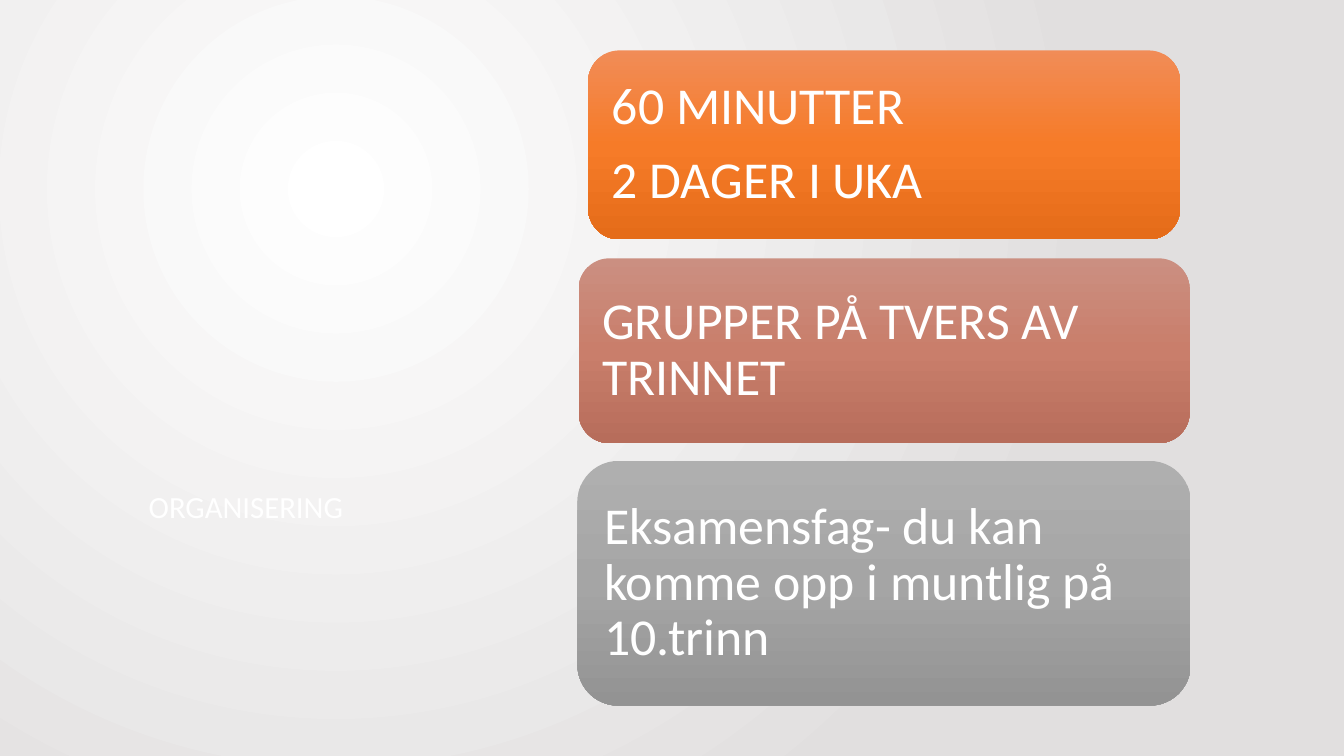
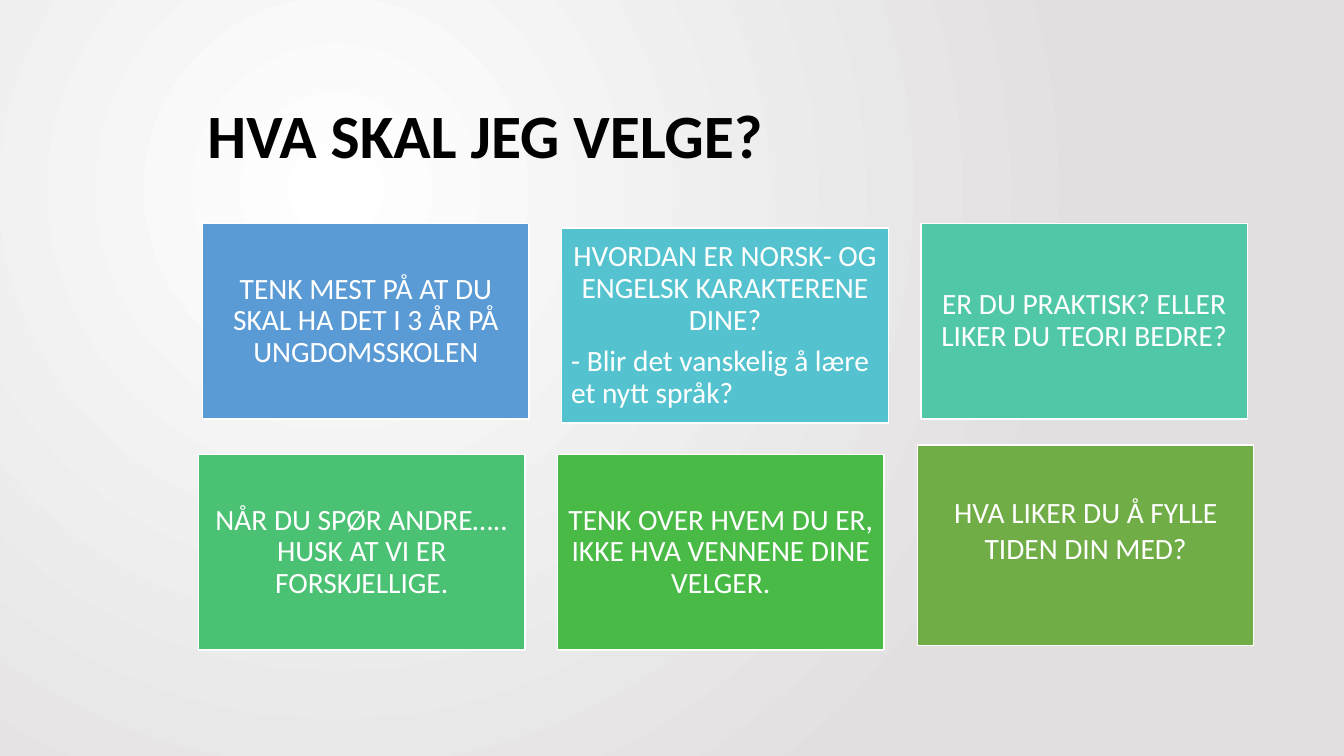
from lxml import etree
from pptx import Presentation
from pptx.dml.color import RGBColor
from pptx.enum.shapes import MSO_SHAPE as Shape
from pptx.enum.text import MSO_ANCHOR as Anchor, MSO_AUTO_SIZE as AutoSize, PP_ALIGN as Align
from pptx.oxml.ns import qn
from pptx.util import Emu, Pt

PX = 9525
FONT = "Calibri"
WHITE = RGBColor(0xFF, 0xFF, 0xFF)
BLACK = RGBColor(0x00, 0x00, 0x00)
LIGHT_GREY = RGBColor(0xE1, 0xDF, 0xDF)
ORANGE = (RGBColor(0xF1, 0x8C, 0x57), RGBColor(0xF6, 0x7B, 0x28), RGBColor(0xE5, 0x6C, 0x19))
TERRACOTTA = (RGBColor(0xCB, 0x8F, 0x81), RGBColor(0xC9, 0x7E, 0x6B), RGBColor(0xB7, 0x6D, 0x5B))
GREY = (RGBColor(0xAF, 0xAF, 0xAF), RGBColor(0xA5, 0xA5, 0xA5), RGBColor(0x93, 0x93, 0x93))
BLUE = RGBColor(0x5B, 0x9B, 0xD5)
CYAN = RGBColor(0x55, 0xC3, 0xCF)
TEAL = RGBColor(0x50, 0xC8, 0xA7)
MINT = RGBColor(0x4B, 0xC1, 0x74)
GREEN = RGBColor(0x4A, 0xBA, 0x46)
OLIVE = RGBColor(0x70, 0xAD, 0x47)

ORGANISING = [
    ((560, 48, 564, 180), ORANGE, ["60 MINUTTER", "2 DAGER I UKA"]),
    ((551, 246, 582, 176), TERRACOTTA, ["GRUPPER PÅ TVERS AV TRINNET"]),
    ((550, 439, 584, 233), GREY, ["Eksamensfag- du kan komme opp i muntlig på 10.trinn"]),
]
ADVICE = [
    (BLUE, ["TENK MEST PÅ AT DU SKAL HA DET I 3 ÅR PÅ UNGDOMSSKOLEN"]),
    (CYAN, ["HVORDAN ER NORSK- OG ENGELSK KARAKTERENE DINE?",
            "- Blir det vanskelig å lære et nytt språk?"]),
    (TEAL, ["ER DU PRAKTISK? ELLER LIKER DU TEORI BEDRE?"]),
    (MINT, ["NÅR DU SPØR ANDRE….. HUSK AT VI ER FORSKJELLIGE."]),
    (GREEN, ["TENK OVER HVEM DU ER, IKKE HVA VENNENE DINE VELGER."]),
]


def px(*lengths):
    return [Emu(length * PX) for length in lengths]


def set_gradient(fill, parent, colors, radial=False):
    fill.gradient()
    gradient = parent.find(qn("a:gradFill"))
    for child in list(gradient):
        gradient.remove(child)
    stops = etree.SubElement(gradient, qn("a:gsLst"))
    for index, color in enumerate(colors):
        position = 100000 * index // (len(colors) - 1)
        stop = etree.SubElement(stops, qn("a:gs"), pos=str(position))
        etree.SubElement(stop, qn("a:srgbClr"), val=str(color))
    if radial:
        circle = etree.SubElement(gradient, qn("a:path"), path="circle")
        etree.SubElement(circle, qn("a:fillToRect"), l="50000", t="50000", r="100000", b="100000")
    else:
        etree.SubElement(gradient, qn("a:lin"), ang="5400000", scaled="0")


def set_background(master):
    fill = master.background.fill
    set_gradient(fill, master.element.find(".//" + qn("p:bgPr")), (WHITE, LIGHT_GREY), radial=True)


def style_paragraph(paragraph, size, color, align, spacing=0.9, bold=False):
    paragraph.alignment = align
    paragraph.line_spacing = spacing
    paragraph.font.name = FONT
    paragraph.font.size = Pt(size)
    paragraph.font.bold = bold
    paragraph.font.color.rgb = color


def add_titled_slide(presentation, text, box, size, color, bold=False):
    slide = presentation.slides.add_slide(presentation.slide_layouts[5])
    title = slide.shapes.title
    title.left, title.top, title.width, title.height = px(*box)
    frame = title.text_frame
    frame.text = text
    frame.auto_size = AutoSize.NONE
    frame.vertical_anchor = Anchor.MIDDLE
    style_paragraph(frame.paragraphs[0], size, color, Align.LEFT, bold=bold)
    return slide


def add_card(slide, kind, box, texts, size, inset, aligns, spacing=0.9, extra_bottom=0):
    shape = slide.shapes.add_shape(kind, *px(*box))
    shape.shadow.inherit = False
    frame = shape.text_frame
    frame.word_wrap = True
    frame.vertical_anchor = Anchor.MIDDLE
    frame.margin_left, frame.margin_top, frame.margin_right, frame.margin_bottom = px(
        inset, inset, inset, inset + extra_bottom)
    frame.text = "\n".join(texts)
    for paragraph, align in zip(frame.paragraphs, aligns):
        style_paragraph(paragraph, size, WHITE, align, spacing)
        paragraph.space_after = Pt(round(size * 0.35))
    return shape


def add_gradient_card(slide, box, colors, texts):
    shape = add_card(slide, Shape.ROUNDED_RECTANGLE, box, texts, 37, 14, [Align.LEFT] * len(texts))
    set_gradient(shape.fill, shape.element.spPr, colors)
    shape.line.fill.background()


def add_advice_card(slide, box, color, texts, **layout):
    shape = add_card(slide, Shape.RECTANGLE, box, texts, 21, 9, [Align.CENTER, Align.LEFT], **layout)
    shape.fill.solid()
    shape.fill.fore_color.rgb = color
    shape.line.color.rgb = WHITE
    shape.line.width = Pt(1)


def build_organising(presentation):
    slide = add_titled_slide(presentation, "ORGANISERING", (132, 454, 380, 60), 22, WHITE)
    for box, colors, texts in ORGANISING:
        add_gradient_card(slide, box, colors, texts)


def build_advice(presentation):
    slide = add_titled_slide(presentation, "HVA SKAL JEG VELGE?", (188, 65, 1020, 134), 44, BLACK, bold=True)
    row_origins = [(193, 213), (189, 433)]
    for index, (color, texts) in enumerate(ADVICE):
        row, column = divmod(index, 3)
        left, top = row_origins[row]
        drop = 4 if color == CYAN else 0
        add_advice_card(slide, (left + 342 * column, top + drop, 311, 186), color, texts)
    add_advice_card(slide, (874, 424, 320, 191), OLIVE, ["HVA LIKER DU Å FYLLE TIDEN DIN MED?"],
                    spacing=1.0, extra_bottom=30)


def main():
    presentation = Presentation()
    presentation.slide_width, presentation.slide_height = px(1280, 720)
    set_background(presentation.slide_master)
    build_organising(presentation)
    build_advice(presentation)
    presentation.save("out.pptx")


if __name__ == "__main__":
    main()
